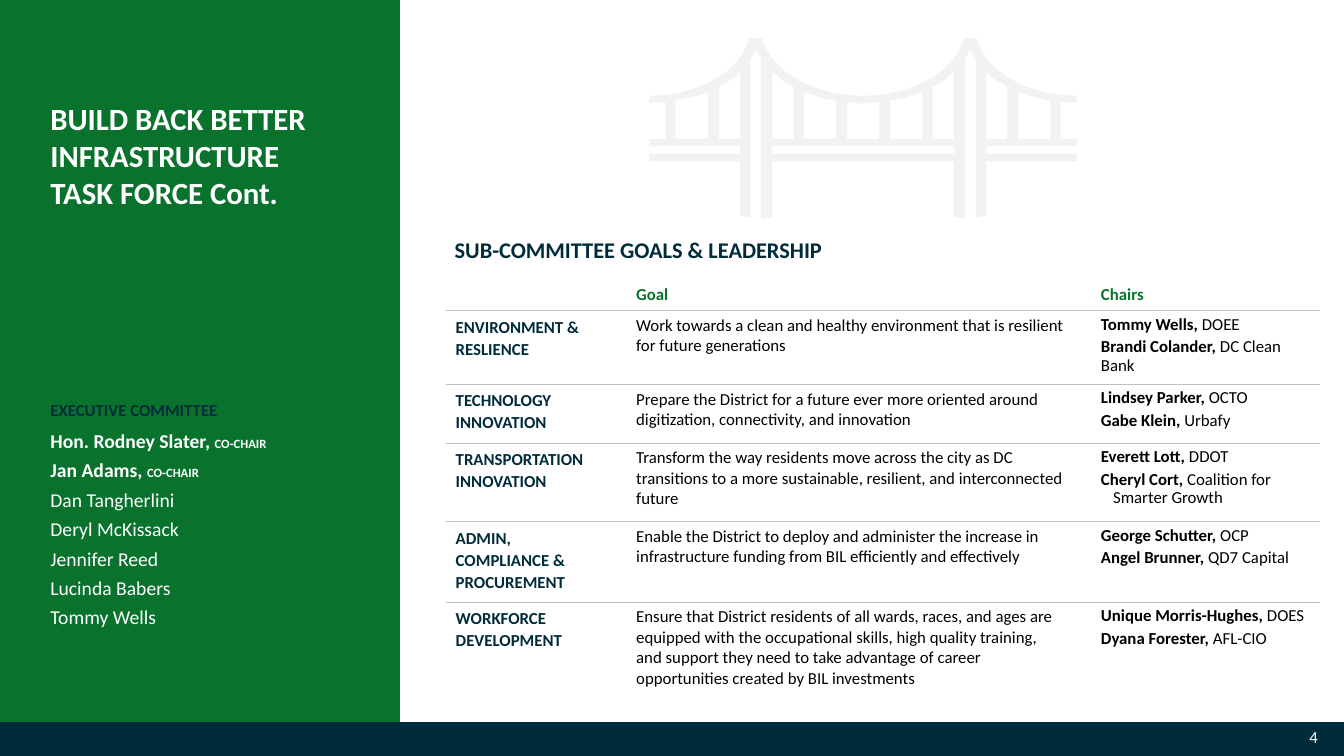
from dataclasses import dataclass
from pptx import Presentation
from pptx.dml.color import RGBColor
from pptx.enum.shapes import MSO_SHAPE
from pptx.enum.text import MSO_ANCHOR, PP_ALIGN
from pptx.oxml import parse_xml
from pptx.oxml.ns import nsdecls, qn
from pptx.util import Inches, Pt

HUES = {
    "green": "09732D", "navy": "002B3A", "white": "FFFFFF",
    "black": "000000", "line": "BFBFBF", "bridge": "F2F2F2",
}
FONT = "Calibri"
PLAIN = "{2D5ABB26-0587-4C30-8999-92F81FD0307C}"
Point = tuple[float, float]


@dataclass
class Chair:
    name: str
    group: str
    hang: float = 0


@dataclass
class Team:
    label: str
    goal: str
    chairs: list[Chair]
    height: float


@dataclass
class Member:
    name: str
    role: str = ""


TEAMS = [
    Team("ENVIRONMENT & RESLIENCE",
         "Work towards a clean and healthy environment that is resilient for future generations",
         [Chair("Tommy Wells,", "DOEE"), Chair("Brandi Colander,", "DC Clean Bank")], 0.58),
    Team("TECHNOLOGY INNOVATION",
         "Prepare the District for a future ever more oriented around digitization, "
         "connectivity, and innovation",
         [Chair("Lindsey Parker,", "OCTO"), Chair("Gabe Klein,", "Urbafy")], 0.58),
    Team("TRANSPORTATION INNOVATION",
         "Transform the way residents move across the city as DC transitions to a more "
         "sustainable, resilient, and interconnected future",
         [Chair("Everett Lott,", "DDOT"),
          Chair("Cheryl Cort,", "Coalition for \nSmarter Growth", 0.12)], 0.78),
    Team("ADMIN, COMPLIANCE & PROCUREMENT",
         "Enable the District to deploy and administer the increase in infrastructure "
         "funding from BIL efficiently and effectively",
         [Chair("George Schutter,", "OCP"), Chair("Angel Brunner,", "QD7 Capital")], 0.58),
    Team("WORKFORCE DEVELOPMENT",
         "Ensure that District residents of all wards, races, and ages are equipped with the "
         "occupational skills, high quality training, and support they need to take advantage "
         "of career opportunities created by BIL investments",
         [Chair("Unique Morris-Hughes,", "DOES"), Chair("Dyana Forester,", "AFL-CIO")], 0.99),
]
MEMBERS = [
    Member("Hon. Rodney Slater", "CO-CHAIR"), Member("Jan Adams", "CO-CHAIR"),
    Member("Dan Tangherlini"), Member("Deryl McKissack"), Member("Jennifer Reed"),
    Member("Lucinda Babers"), Member("Tommy Wells"),
]


def tint(name: str) -> RGBColor:
    return RGBColor.from_string(HUES[name])


def write(para, text: str, size: float, hue: str, bold: bool = False) -> None:
    for spot, part in enumerate(text.split("\n")):
        if spot:
            para.add_line_break()
        run = para.add_run()
        run.text = part
        run.font.name = FONT
        run.font.size = Pt(size)
        run.font.bold = bold
        run.font.color.rgb = tint(hue)


def inset(area, left: float, top: float, right: float, base: float) -> None:
    area.margin_left, area.margin_top = Inches(left), Inches(top)
    area.margin_right, area.margin_bottom = Inches(right), Inches(base)


def flood(shape, hue: str) -> None:
    shape.fill.solid()
    shape.fill.fore_color.rgb = tint(hue)


def paint(shape, hue: str) -> None:
    shape.shadow.inherit = False
    flood(shape, hue)
    shape.line.fill.background()


def curve(a: Point, b: Point, c: Point, d: Point, steps: int = 16) -> list[Point]:
    dots = []
    for step in range(steps + 1):
        t = step / steps
        u = 1 - t
        dots.append(tuple(u**3 * a[i] + 3 * u * u * t * b[i] + 3 * u * t * t * c[i] + t**3 * d[i]
                          for i in range(2)))
    return dots


def flip(dots: list[Point]) -> list[Point]:
    return [(-x, y) for x, y in reversed(dots)]


def draw_bridge(shapes, mid: float) -> None:
    half = [
        *curve((0, 0.95), (0.49, 0.95), (0.91, 0.71), (1, 0.38)),
        *curve((1.13, 0.38), (1.21, 0.71), (1.63, 0.95), (2.12, 0.95)),
        (2.12, 1.02), (1.96, 1.01), (1.96, 1.38), (2.12, 1.38), (2.12, 1.45),
        (1.22, 1.45), (1.22, 1.53), (2.12, 1.53), (2.12, 1.6), (1.22, 1.6),
        (1.22, 2.14), (1.12, 2.16), (1.12, 0.59), (1.06, 0.5), (1.01, 0.59),
        (1.01, 2.17), (0.9, 2.15), (0.9, 1.6),
    ]
    arcs = [
        [(0.27, 1), (0.38, 0.98), (0.59, 0.91)],
        [(0.69, 0.86), (0.77, 0.82), (0.9, 0.71)],
        [(1.22, 0.71), (1.28, 0.77), (1.43, 0.86)],
        [(1.54, 0.91), (1.64, 0.95), (1.86, 1)],
    ]
    gaps = [[*arc, (arc[-1][0], 1.38), (arc[0][0], 1.38)] for arc in arcs]
    loops = [half + flip(half), *gaps, *[flip(gap) for gap in gaps],
             [(-0.16, 1.01), (0, 1.03), (0.16, 1.01), (0.16, 1.38), (-0.16, 1.38)],
             [(-0.9, 1.45), (0.9, 1.45), (0.9, 1.53), (-0.9, 1.53)]]
    pen = None
    for loop in loops:
        dots = [(Inches(mid + x), Inches(y)) for x, y in loop]
        if pen is None:
            pen = shapes.build_freeform(*dots[0])
        else:
            pen.move_to(*dots[0])
        pen.add_line_segments(dots[1:], close=True)
    paint(pen.convert_to_shape(), "bridge")


def rule(cell) -> None:
    line = parse_xml(f'<a:lnB {nsdecls("a")} w="3175"><a:solidFill>'
                     f'<a:srgbClr val="{HUES["line"]}"/></a:solidFill></a:lnB>')
    cell._tc.get_or_add_tcPr().insert(0, line)


def add_grid(shapes, left: float, top: float, cols: list[float], rows: list[float]):
    grid = shapes.add_table(len(rows), len(cols), Inches(left), Inches(top),
                            Inches(sum(cols)), Inches(sum(rows))).table
    grid.first_row = grid.horz_banding = False
    grid._tbl.tblPr.find(qn("a:tableStyleId")).text = PLAIN
    for col, width in zip(grid.columns, cols):
        col.width = Inches(width)
    for row, height in zip(grid.rows, rows):
        row.height = Inches(height)
    return grid


def draw_panel(shapes) -> None:
    grid = add_grid(shapes, 0, 0, [3.97, 9.36], [7.16])
    left, right = grid.cell(0, 0), grid.cell(0, 1)
    flood(left, "green")
    flood(right, "white")
    inset(left, 0.5, 1, 0.25, 0.05)
    inset(right, 0.54, 2.35, 0.75, 0.05)
    text = left.text_frame
    write(text.paragraphs[0], "BUILD BACK BETTER INFRASTRUCTURE \nTASK FORCE Cont.",
          22, "white", True)
    head = text.add_paragraph()
    head.space_before, head.space_after = Pt(134), Pt(6)
    write(head, "EXECUTIVE COMMITTEE", 12, "navy", True)
    for member in MEMBERS:
        para = text.add_paragraph()
        para.space_after = Pt(4)
        if member.role:
            write(para, member.name + ", ", 14, "white", True)
            write(para, member.role, 9, "white", True)
        else:
            write(para, member.name, 14, "white")
    write(right.text_frame.paragraphs[0], "SUB-COMMITTEE GOALS & LEADERSHIP", 16, "navy", True)


def draw_goals(shapes) -> None:
    sizes = [0.32] + [team.height for team in TEAMS]
    grid = add_grid(shapes, 4.42, 2.76, [1.79, 4.61, 2.27], sizes)
    for index in range(len(sizes)):
        for col, right in enumerate((0.2, 0.25, 0.1)):
            cell = grid.cell(index, col)
            cell.fill.background()
            inset(cell, 0.1, 0.05, right, 0.1 if index else 0.05)
            if index < len(TEAMS):
                rule(cell)
    blank = grid.cell(0, 0).text_frame.paragraphs[0]
    blank._p.append(parse_xml(f'<a:endParaRPr {nsdecls("a")} sz="1200"/>'))
    for col, text in enumerate(("Goal", "Chairs"), 1):
        cell = grid.cell(0, col)
        cell.vertical_anchor = MSO_ANCHOR.BOTTOM
        write(cell.text_frame.paragraphs[0], text, 12, "green", True)
    for index, team in enumerate(TEAMS, 1):
        label, goal, chairs = (grid.cell(index, col).text_frame for col in range(3))
        label.paragraphs[0].line_spacing = 1.08
        write(label.paragraphs[0], team.label, 12, "navy", True)
        write(goal.paragraphs[0], team.goal, 12, "black")
        for spot, chair in enumerate(team.chairs):
            para = chairs.add_paragraph() if spot else chairs.paragraphs[0]
            para.line_spacing = 0.9
            para.space_before = Pt(3 if spot else 0)
            if chair.hang:
                props = para._p.get_or_add_pPr()
                props.set("marL", str(Inches(chair.hang)))
                props.set("indent", str(-Inches(chair.hang)))
            write(para, chair.name + " ", 12, "black", True)
            write(para, chair.group, 12, "black")


def draw_foot(shapes) -> None:
    bar = shapes.add_shape(MSO_SHAPE.RECTANGLE, 0, Inches(7.15), Inches(13.33), Inches(0.35))
    paint(bar, "navy")
    box = shapes.add_textbox(Inches(10.17), Inches(7.16), Inches(3), Inches(0.34))
    box.text_frame.word_wrap = True
    para = box.text_frame.paragraphs[0]
    para.alignment = PP_ALIGN.RIGHT
    write(para, "4", 12, "white")


def main() -> None:
    deck = Presentation()
    deck.slide_width, deck.slide_height = Inches(13.33), Inches(7.5)
    shapes = deck.slides.add_slide(deck.slide_layouts[6]).shapes
    draw_foot(shapes)
    draw_panel(shapes)
    draw_goals(shapes)
    draw_bridge(shapes, 8.56)
    deck.save("out.pptx")


if __name__ == "__main__":
    main()
